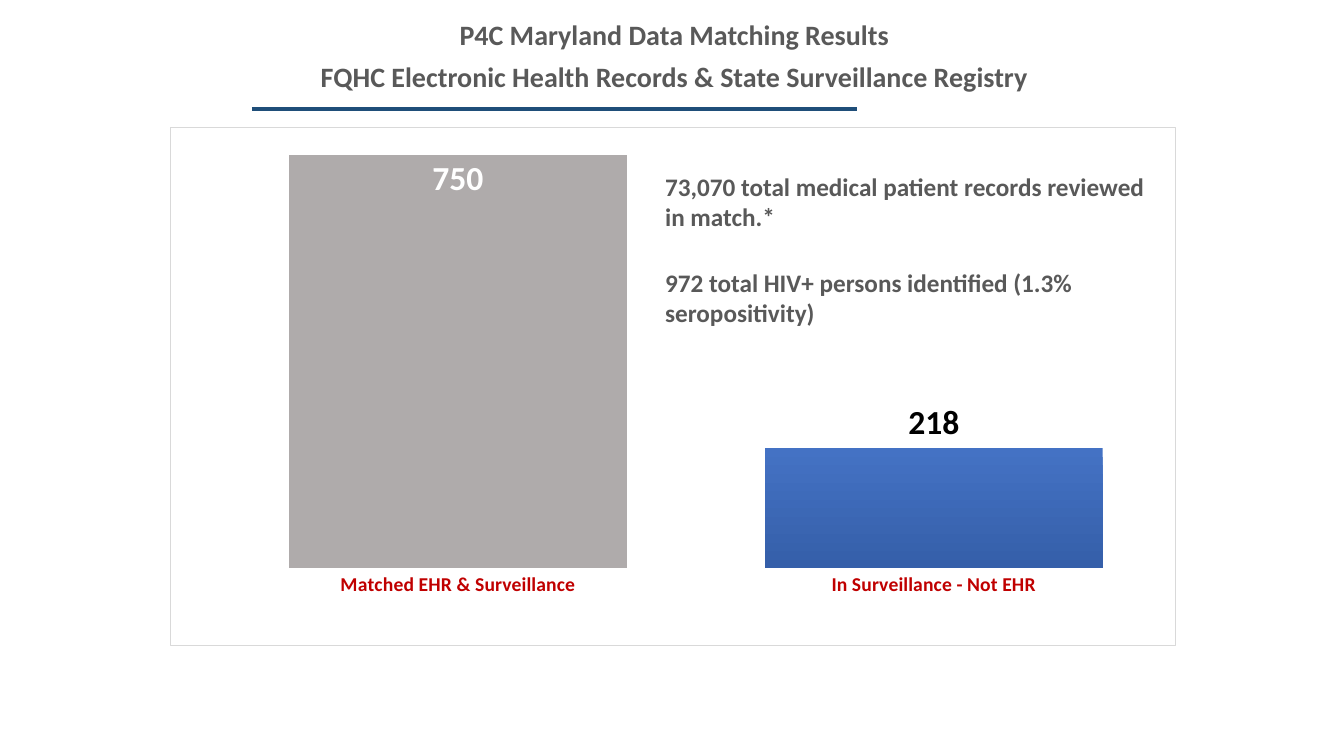
from lxml.etree import SubElement
from pptx import Presentation
from pptx.chart.data import CategoryChartData
from pptx.dml.color import RGBColor
from pptx.enum.chart import XL_CHART_TYPE, XL_LABEL_POSITION, XL_TICK_MARK
from pptx.enum.shapes import MSO_CONNECTOR
from pptx.enum.text import MSO_ANCHOR, PP_ALIGN
from pptx.oxml import parse_xml
from pptx.oxml.ns import nsdecls, qn
from pptx.util import Pt

FONT = "Calibri"
COLORS = {
    "text": "595959", "rule": "1F4E79", "category": "C00000",
    "matched": "AFABAB", "blue_top": "4472C4", "blue_bottom": "355FA9",
    "white": "FFFFFF", "black": "000000", "border": "D9D9D9",
}

TITLE = ["P4C Maryland Data Matching Results",
         "FQHC Electronic Health Records & State Surveillance Registry"]
NOTES = ["73,070 total medical patient records reviewed in match.*",
         "972 total HIV+ persons identified (1.3% seropositivity)"]
RESULTS = {"Matched EHR & Surveillance": 750, "In Surveillance - Not EHR": 218}
LABEL_STYLES = [(XL_LABEL_POSITION.INSIDE_END, "white"),
                (XL_LABEL_POSITION.OUTSIDE_END, "black")]

TITLE_BOX = (121.7, 9.4, 720, 59.8)
RULE = (180, 77.8, 612, 77.8)
CHART_BOX = (121.7, 90.7, 718.6, 370.8)
PLOT_AREA = {"x": 0.049, "y": 0.001, "w": 0.947, "h": 0.85}
NOTE_LEFT, NOTE_TOP, NOTE_WIDTH, NOTE_HEIGHT, NOTE_STEP = 468, 110.9, 370.8, 66.2, 68.4


def rgb(name):
    return RGBColor.from_string(COLORS[name])


def pts(values):
    return [Pt(v) for v in values]


def style_font(font, size, color, bold=True):
    font.name, font.size, font.bold = FONT, Pt(size), bold
    font.color.rgb = rgb(color)


def add_text(slide, box, lines, size, align):
    tf = slide.shapes.add_textbox(*pts(box)).text_frame
    tf.word_wrap = True
    tf.vertical_anchor = MSO_ANCHOR.MIDDLE
    tf.text = "\n".join(lines)
    for p in tf.paragraphs:
        p.alignment = align
        p.space_after = Pt(6)
        for r in p.runs:
            style_font(r.font, size, "text")


def add_rule(slide):
    line = slide.shapes.add_connector(MSO_CONNECTOR.STRAIGHT, *pts(RULE))
    line.line.color.rgb = rgb("rule")
    line.line.width = Pt(3)
    SubElement(line._element.spPr, qn("a:effectLst"))


def frame_chart(chart):
    """Fix the inner plot area and outline the chart, which need XML."""
    plot_area = chart._chartSpace.chart.plotArea
    for old in plot_area.findall(qn("c:layout")):
        plot_area.remove(old)
    sizes = "".join(f'<c:{k} val="{v}"/>' for k, v in PLOT_AREA.items())
    plot_area.insert(0, parse_xml(
        f'<c:layout {nsdecls("c")}><c:manualLayout><c:layoutTarget val="inner"/>'
        f'<c:xMode val="edge"/><c:yMode val="edge"/>{sizes}'
        '</c:manualLayout></c:layout>'))
    chart._chartSpace.chart.addnext(parse_xml(
        f'<c:spPr {nsdecls("c", "a")}><a:noFill/><a:ln w="{Pt(0.75)}"><a:solidFill>'
        f'<a:srgbClr val="{COLORS["border"]}"/></a:solidFill></a:ln></c:spPr>'))


def add_results_chart(slide):
    data = CategoryChartData()
    data.categories = list(RESULTS)
    data.add_series("Series 1", list(RESULTS.values()))
    chart = slide.shapes.add_chart(
        XL_CHART_TYPE.COLUMN_CLUSTERED, *pts(CHART_BOX), data).chart
    chart.has_title = chart.has_legend = False
    style_font(chart.font, 10, "black", bold=False)
    frame_chart(chart)

    cat = chart.category_axis
    cat.major_tick_mark = XL_TICK_MARK.NONE
    cat.format.line.fill.background()
    style_font(cat.tick_labels.font, 14, "category")
    val = chart.value_axis
    val.visible = val.has_major_gridlines = False
    val.minimum_scale, val.maximum_scale, val.major_unit = 0, 800, 100

    plot = chart.plots[0]
    plot.gap_width = 41
    plot.vary_by_categories = False
    series = plot.series[0]
    fill = series.format.fill
    fill.gradient()
    fill.gradient_angle = 270
    for stop, color in zip(fill.gradient_stops, ("blue_top", "blue_bottom")):
        stop.color.rgb = rgb(color)
    matched = series.points[0].format.fill
    matched.solid()
    matched.fore_color.rgb = rgb("matched")

    series.data_labels.show_value = True
    for i, (position, color) in enumerate(LABEL_STYLES):
        label = series.points[i].data_label
        style_font(label.font, 24, color)
        label.position = position


def main():
    prs = Presentation()
    prs.slide_width, prs.slide_height = Pt(960), Pt(540)
    slide = prs.slides.add_slide(prs.slide_layouts[6])
    add_text(slide, TITLE_BOX, TITLE, 20, PP_ALIGN.CENTER)
    add_rule(slide)
    add_results_chart(slide)
    for i, note in enumerate(NOTES):
        box = (NOTE_LEFT, NOTE_TOP + i * NOTE_STEP, NOTE_WIDTH, NOTE_HEIGHT)
        add_text(slide, box, [note], 18, PP_ALIGN.LEFT)
    prs.save("out.pptx")


if __name__ == "__main__":
    main()
